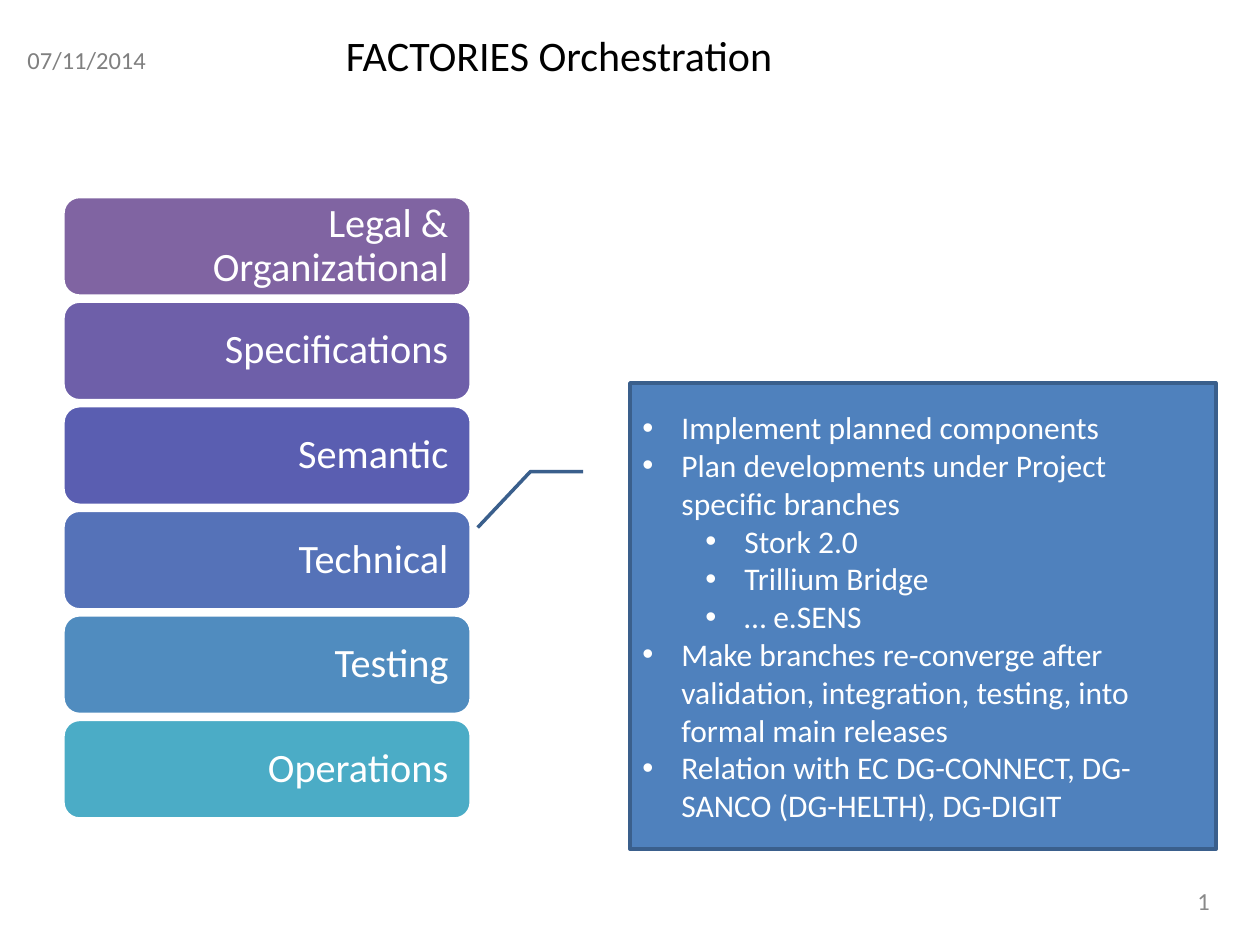
from dataclasses import dataclass

from lxml.etree import SubElement
from pptx import Presentation
from pptx.dml.color import RGBColor as Rgb
from pptx.enum.shapes import MSO_SHAPE as Shape
from pptx.enum.text import MSO_ANCHOR as Anchor, PP_ALIGN as Align
from pptx.oxml.ns import qn
from pptx.util import Inches, Pt


@dataclass(frozen=True)
class Theme:
    font: str = "Calibri"
    white: str = "FFFFFF"
    title: str = "000000"
    date: str = "808080"
    number: str = "898989"
    callout_fill: str = "4F81BD"
    callout_line: str = "3A5F8C"
    layers: tuple = ("8064A2", "6E5FA9", "5A5EB1", "5572B8", "508CBF", "4BACC6")
    title_size: float = 24
    layer_size: float = 23
    body_size: float = 18
    footer_size: float = 14
    line_width: float = 2


LAYERS = ("Legal & Organizational", "Specifications", "Semantic",
          "Technical", "Testing", "Operations")
LAYER_TOP, LAYER_PITCH = 1.56, 0.83

TASKS = (
    (0, "Implement planned components"),
    (0, "Plan developments under Project specific branches"),
    (1, "Stork 2.0"),
    (1, "Trillium Bridge"),
    (1, "… e.SENS"),
    (0, "Make branches re-converge after validation, integration, testing, "
        "into formal main releases"),
    (0, "Relation with EC DG-CONNECT, DG-SANCO (DG-HELTH), DG-DIGIT"),
)
# Callout pointer as y, x pairs, in fractions of the callout box
POINTER = (0.19, -0.08, 0.19, -0.17, 0.31, -0.26)


class SlideBuilder:
    def __init__(self, page, theme):
        self.page = page
        self.theme = theme

    def format_para(self, para, size, color, align=Align.LEFT):
        para.alignment = align
        for span in para.runs:
            span.font.name = self.theme.font
            span.font.size = Pt(size)
            span.font.color.rgb = Rgb.from_string(color)

    def text(self, place, text, size, color, align=Align.LEFT):
        box = self.page.shapes.add_textbox(*map(Inches, place))
        frame = box.text_frame
        frame.word_wrap = True
        frame.vertical_anchor = Anchor.MIDDLE
        frame.text = text
        self.format_para(frame.paragraphs[0], size, color, align)

    def panel(self, kind, place, fill, line):
        panel = self.page.shapes.add_shape(kind, *map(Inches, place))
        panel.shadow.inherit = False
        panel.fill.solid()
        panel.fill.fore_color.rgb = Rgb.from_string(fill)
        panel.line.color.rgb = Rgb.from_string(line)
        panel.line.width = Pt(self.theme.line_width)
        panel.text_frame.word_wrap = True
        panel.text_frame.vertical_anchor = Anchor.MIDDLE
        return panel

    def layer(self, place, text, fill):
        theme = self.theme
        frame = self.panel(Shape.ROUNDED_RECTANGLE, place, fill, theme.white).text_frame
        frame.margin_left = frame.margin_right = Inches(0.14)
        frame.text = text
        para = frame.paragraphs[0]
        para.line_spacing = 0.9
        self.format_para(para, theme.layer_size, theme.white, Align.RIGHT)

    def bullet(self, para, level):
        para.level = level
        props = para._p.get_or_add_pPr()
        props.set("marL", str(Inches(0.31 + 0.5 * level)))
        props.set("indent", str(-Inches(0.31)))
        SubElement(props, qn("a:buFont")).set("typeface", "Arial")
        SubElement(props, qn("a:buChar")).set("char", "•")

    def callout(self, place, pointer, items):
        theme = self.theme
        callout = self.panel(Shape.LINE_CALLOUT_2, place,
                             theme.callout_fill, theme.callout_line)
        for index, value in enumerate(pointer):
            callout.adjustments[index] = value
        frame = callout.text_frame
        frame.text = "\n".join(text for _, text in items)
        for para, (level, _) in zip(frame.paragraphs, items):
            self.bullet(para, level)
            self.format_para(para, theme.body_size, theme.white)


def main():
    deck = Presentation()
    deck.slide_width, deck.slide_height = Inches(10), Inches(7.5)
    theme = Theme()
    builder = SlideBuilder(deck.slides.add_slide(deck.slide_layouts[6]), theme)

    builder.text((8.55, 6.95, 1.15, 0.4), "1", theme.footer_size, theme.number, Align.RIGHT)
    builder.text((0.12, 0.27, 1.17, 0.4), "07/11/2014", theme.footer_size, theme.date)
    for index, (name, fill) in enumerate(zip(LAYERS, theme.layers)):
        builder.layer((0.5, LAYER_TOP + index * LAYER_PITCH, 3.24, 0.79), name, fill)
    builder.text((1.28, 0.07, 6.39, 0.72), "FACTORIES Orchestration ",
                 theme.title_size, theme.title, Align.CENTER)
    builder.callout((5, 3.04, 4.65, 3.7), POINTER, TASKS)

    deck.save("out.pptx")


if __name__ == "__main__":
    main()
